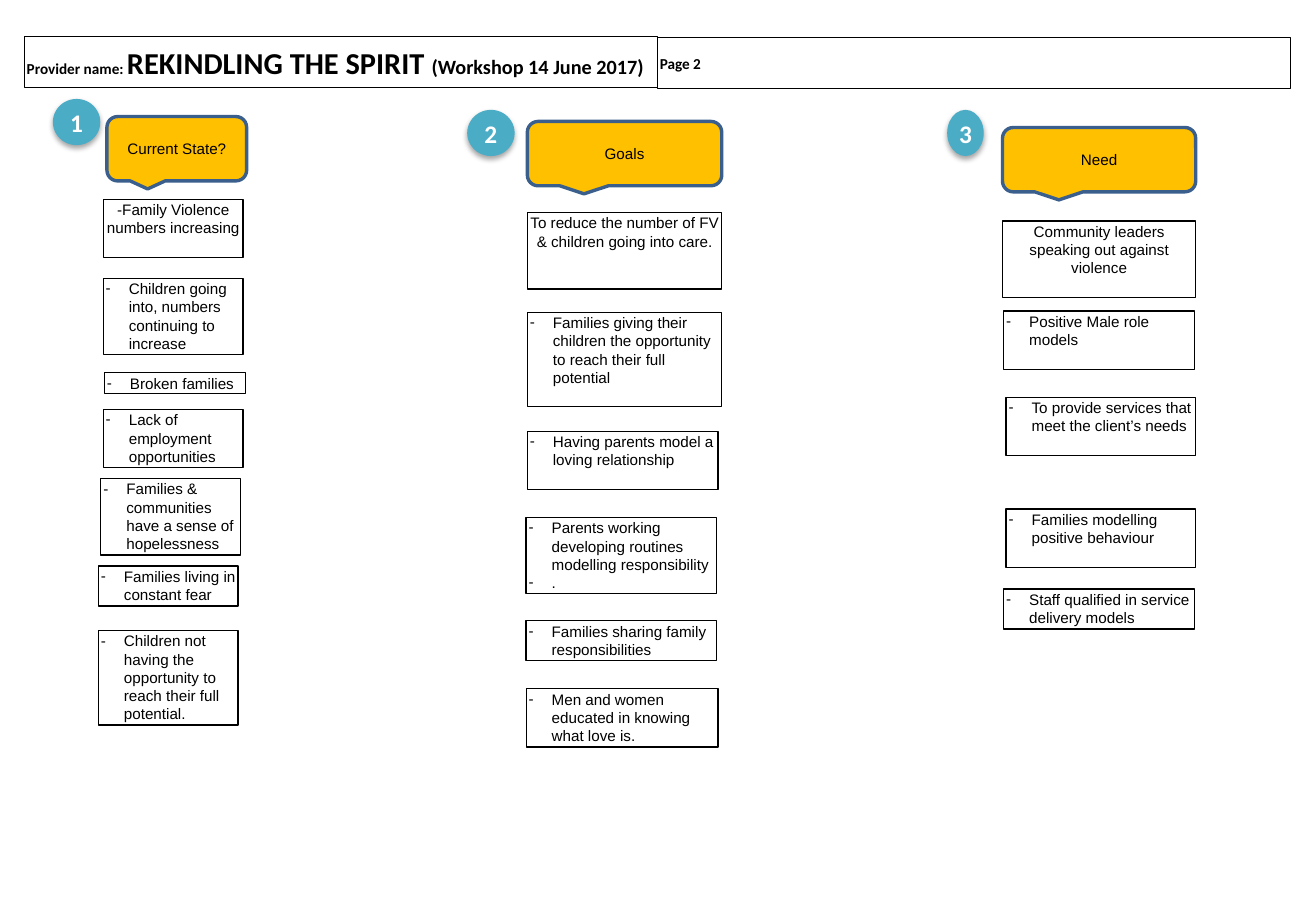
from lxml import etree
from pptx import Presentation
from pptx.dml.color import RGBColor
from pptx.enum import shapes, text
from pptx.oxml import parse_xml
from pptx.oxml.ns import nsdecls, qn
from pptx.util import Inches, Pt

SHADOW = f"""<a:effectLst {nsdecls('a')}>
<a:outerShdw blurRad="40000" dist="23000" dir="5400000" rotWithShape="0">
<a:srgbClr val="000000"><a:alpha val="35000"/></a:srgbClr>
</a:outerShdw></a:effectLst>"""


def write(shape, paragraphs, font="Arial", color="000000", bold=False,
          align="CENTER", anchor="MIDDLE", bullet=False):
    frame = shape.text_frame
    frame.word_wrap = True
    frame.auto_size = text.MSO_AUTO_SIZE.NONE
    frame.vertical_anchor = text.MSO_ANCHOR[anchor]
    frame.margin_left = frame.margin_right = Inches(0.02)
    frame.margin_top = frame.margin_bottom = Inches(0.01)
    for index, runs in enumerate(paragraphs):
        paragraph = frame.add_paragraph() if index else frame.paragraphs[0]
        paragraph.alignment = text.PP_ALIGN[align]
        if bullet:
            properties = paragraph._p.get_or_add_pPr()
            properties.set("marL", str(Inches(0.19)))
            properties.set("indent", str(-Inches(0.19)))
            etree.SubElement(properties, qn("a:buFont")).set("typeface", "Arial")
            etree.SubElement(properties, qn("a:buChar")).set("char", "-")
        for words, size in runs:
            run = paragraph.add_run()
            run.text = words
            run.font.name = font
            run.font.size = Pt(size)
            run.font.bold = bold
            run.font.color.rgb = RGBColor.from_string(color)


def draw(kind, left, top, width, height, fill=None, line="000000", weight=0.75):
    box = [Inches(value) for value in (left, top, width, height)]
    if kind == "TITLE":
        shape = slide.shapes.title
        shape.left, shape.top, shape.width, shape.height = box
    else:
        shape = slide.shapes.add_shape(shapes.MSO_SHAPE[kind], *box)
        shape.shadow.inherit = False
    if fill:
        shape.fill.solid()
        shape.fill.fore_color.rgb = RGBColor.from_string(fill)
    else:
        shape.fill.background()
    shape.line.color.rgb = RGBColor.from_string(line)
    shape.line.width = Pt(weight)
    return shape


presentation = Presentation()
presentation.slide_width = Inches(10.83)
presentation.slide_height = Inches(7.5)
slide = presentation.slides.add_slide(presentation.slide_layouts[5])

title = draw("TITLE", 0.2, 0.3, 5.21, 0.42)
write(title, [[("Provider name: ", 9), ("REKINDLING THE SPIRIT ", 18),
               ("(Workshop 14 June 2017)", 12)]],
      font="Calibri", bold=True, align="LEFT")
page = draw("RECTANGLE", 5.41, 0.31, 5.21, 0.42)
write(page, [[("Page 2", 9)]], font="Calibri", bold=True, align="LEFT")

columns = [
    ("1", (0.44, 0.82, 0.38), "Current State?", (0.88, 0.96, 1.15), [
        (0.85, 1.64, 1.15, 0.48, "-Family Violence numbers increasing"),
        (0.85, 2.29, 1.15, 0.63, "Children going into, numbers continuing to increase"),
        (0.86, 3.07, 1.16, 0.17, "Broken families"),
        (0.85, 3.37, 1.15, 0.48, "Lack of employment opportunities"),
        (0.83, 3.94, 1.15, 0.63, "Families & communities have a sense of hopelessness"),
        (0.81, 4.66, 1.15, 0.33, "Families living in constant fear"),
        (0.81, 5.19, 1.15, 0.78,
         "Children not having the opportunity to reach their full potential."),
    ]),
    ("2", (3.85, 0.91, 0.38), "Goals", (4.34, 1, 1.6), [
        (4.34, 1.75, 1.6, 0.63, "To reduce the number of FV & children going into care."),
        (4.34, 2.57, 1.6, 0.78,
         "Families giving their children the opportunity to reach their full potential"),
        (4.34, 3.55, 1.57, 0.48, "Having parents model a loving relationship"),
        (4.33, 4.26, 1.57, 0.63,
         "Parents working developing routines modelling responsibility\n."),
        (4.33, 5.11, 1.57, 0.33, "Families sharing family responsibilities"),
        (4.33, 5.67, 1.58, 0.48, "Men and women educated in knowing what love is."),
    ]),
    ("3", (7.8, 0.91, 0.29), "Need", (8.25, 1.05, 1.59), [
        (8.25, 1.82, 1.59, 0.63, "Community leaders speaking out against violence"),
        (8.26, 2.56, 1.57, 0.48, "Positive Male role models"),
        (8.28, 3.27, 1.56, 0.48, "To provide services that meet the client’s needs"),
        (8.28, 4.19, 1.56, 0.48, "Families modelling positive behaviour"),
        (8.26, 4.85, 1.57, 0.33, "Staff qualified in service delivery models"),
    ]),
]

for number, badge_place, heading, callout_place, notes in columns:
    callout = draw("ROUNDED_RECTANGULAR_CALLOUT", *callout_place, 0.53,
                   fill="FFC000", line="3A5F8C", weight=2)
    write(callout, [[(heading, 9)]])

    badge = draw("OVAL", *badge_place, 0.37, fill="4BACC6", line="4BACC6")
    effects = badge._element.spPr.find(qn("a:effectLst"))
    effects.getparent().replace(effects, parse_xml(SHADOW))
    write(badge, [[(number, 15)]], font="Calibri", color="FFFFFF", bold=True)

    for index, (left, top, width, height, words) in enumerate(notes):
        note = draw("RECTANGLE", left, top, width, height)
        write(note, [[(part, 9)] for part in words.split("\n")], anchor="TOP",
              align="LEFT" if index else "CENTER", bullet=index > 0)

presentation.save("out.pptx")
